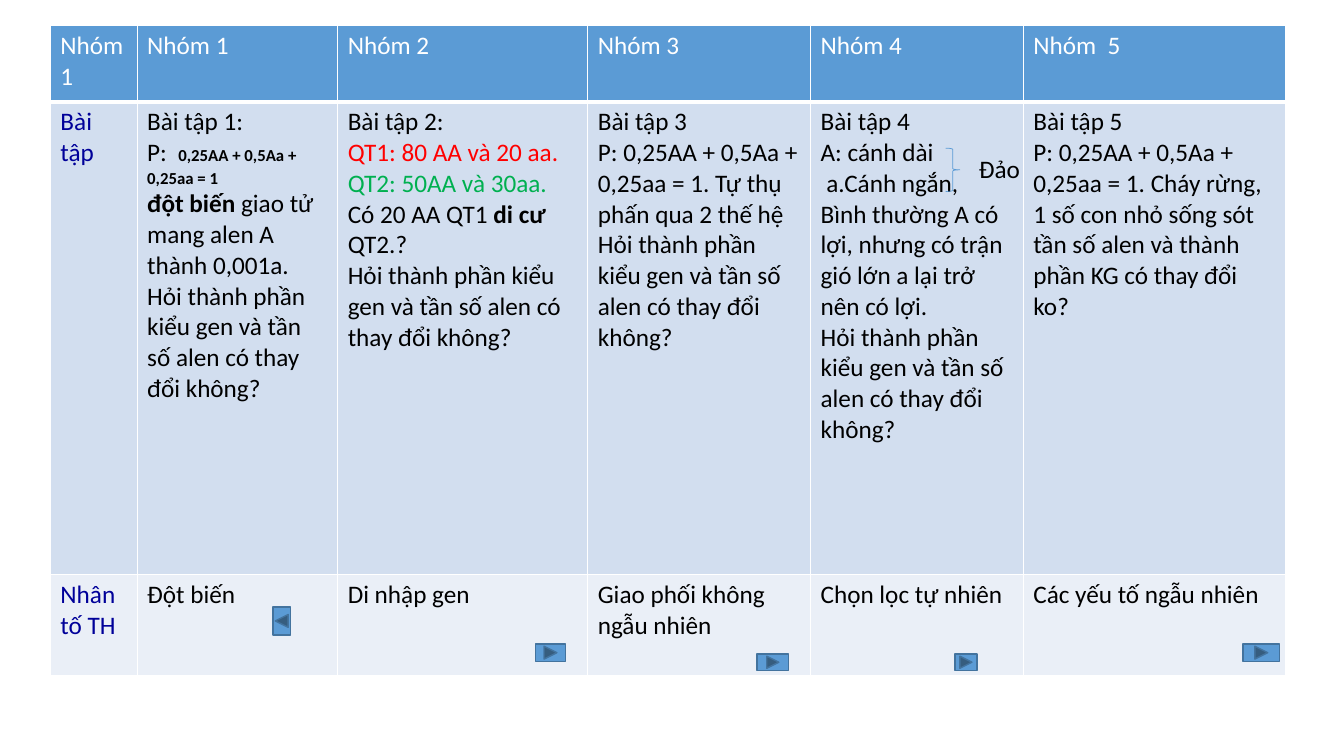
import pptx
import pptx.util
import pptx.dml.color
import pptx.enum.shapes
import pptx.oxml.ns
import lxml.etree

Inches, Pt = pptx.util.Inches, pptx.util.Pt
RGBColor = pptx.dml.color.RGBColor
MSO_SHAPE = pptx.enum.shapes.MSO_SHAPE

WHITE = RGBColor(0xFF, 0xFF, 0xFF)
BLACK = RGBColor(0, 0, 0)
NAVY = RGBColor(0, 0, 0x99)
RED = RGBColor(0xFF, 0, 0)
GREEN = RGBColor(0, 0xB0, 0x50)
BLUE = RGBColor(0x5B, 0x9B, 0xD5)
DARK_BLUE = RGBColor(0x43, 0x73, 0x9E)
ROW_FILLS = [BLUE, RGBColor(0xD2, 0xDE, 0xEF), RGBColor(0xEA, 0xEF, 0xF7)]

QUESTION = "Hỏi thành phần kiểu gen và tần số alen có thay đổi không?"
POPULATION = "0,25AA + 0,5Aa + 0,25aa = 1"


def add_run(p, text, color=BLACK, size=18, bold=False):
    r = p.add_run()
    r.text = text
    r.font.name = "Calibri"
    r.font.size = Pt(size)
    r.font.bold = bold
    r.font.color.rgb = color


def add_border(cell, side, width):
    tcPr = cell._tc.get_or_add_tcPr()
    ln = lxml.etree.SubElement(tcPr, pptx.oxml.ns.qn("a:ln" + side), w=str(Pt(width)))
    fill = lxml.etree.SubElement(ln, pptx.oxml.ns.qn("a:solidFill"))
    lxml.etree.SubElement(fill, pptx.oxml.ns.qn("a:srgbClr"), val=str(WHITE))


prs = pptx.Presentation()
prs.slide_width, prs.slide_height = Inches(13.33), Inches(7.5)
s = prs.slides.add_slide(prs.slide_layouts[6])

headers = ["Nhóm 1", "Nhóm 1", "Nhóm 2", "Nhóm 3", "Nhóm 4", "Nhóm  5"]
factors = ["Nhân tố TH", "Đột biến", "Di nhập gen", "Giao phối không ngẫu nhiên",
           "Chọn lọc tự nhiên", "Các yếu tố ngẫu nhiên"]
exercises = [
    [[("Bài tập", NAVY)]],
    [[("Bài tập 1:",)],
     [("P:  ",), (POPULATION, BLACK, 12, True)],
     [("đột biến ", BLACK, 18, True),
      ("giao tử mang alen A thành 0,001a. " + QUESTION,)]],
    [[("Bài tập 2:",)],
     [("QT1: 80 AA và 20 aa.", RED)],
     [("QT2: 50AA và 30aa. ", GREEN), ("Có 20 AA QT1 ",),
      ("di cư", BLACK, 18, True), (" QT2.?",)],
     [(QUESTION,)]],
    [[("Bài tập 3",)],
     [(f"P: {POPULATION}. Tự thụ phấn qua 2 thế hệ",)],
     [(QUESTION,)]],
    [[("Bài tập 4",)],
     [("A: cánh dài",)],
     [(" a.Cánh ngắn,",)],
     [("Bình thường A có lợi, nhưng có trận gió lớn a lại trở nên có lợi.",)],
     [(QUESTION,)]],
    [[("Bài tập 5",)],
     [(f"P: {POPULATION}. Cháy rừng, 1 số con nhỏ sống sót tần số alen "
       "và thành phần KG có thay đổi ko?",)]],
]
rows = [
    [[[(text, WHITE)]] for text in headers],
    exercises,
    [[[(text, BLACK if i else NAVY)]] for i, text in enumerate(factors)],
]

table = s.shapes.add_table(3, 6, Inches(0.5), Inches(0.25), Inches(12.25), Inches(6.45)).table
for col, width in zip(table.columns, [0.86, 1.99, 2.48, 2.21, 2.11, 2.6]):
    col.width = Inches(width)
for row, height in zip(table.rows, [0.76, 4.69, 1]):
    row.height = Inches(height)

for i, row in enumerate(rows):
    for j, paragraphs in enumerate(row):
        cell = table.cell(i, j)
        for side in "LRTB":
            heavy = (i, side) in [(0, "B"), (1, "T")]
            add_border(cell, side, 3 if heavy else 1)
        cell.fill.solid()
        cell.fill.fore_color.rgb = ROW_FILLS[i]
        tf = cell.text_frame
        for k, runs in enumerate(paragraphs):
            p = tf.add_paragraph() if k else tf.paragraphs[0]
            for run in runs:
                add_run(p, *run)

BACK = MSO_SHAPE.ACTION_BUTTON_BACK_OR_PREVIOUS
NEXT = MSO_SHAPE.ACTION_BUTTON_FORWARD_OR_NEXT
buttons = [
    (BACK, 2.71, 6.02, 0.17, 0.28),
    (NEXT, 5.31, 6.39, 0.3, 0.17),
    (NEXT, 7.51, 6.49, 0.31, 0.16),
    (NEXT, 9.47, 6.49, 0.22, 0.16),
    (NEXT, 12.33, 6.39, 0.36, 0.17),
]
for kind, *box in buttons:
    sp = s.shapes.add_shape(kind, *map(Inches, box))
    sp.shadow.inherit = False
    sp.fill.solid()
    sp.fill.fore_color.rgb = BLUE
    sp.line.color.rgb = DARK_BLUE
    sp.line.width = Pt(1)

brace = s.shapes.add_shape(MSO_SHAPE.RIGHT_BRACE, Inches(9.38), Inches(1.47), Inches(0.14), Inches(0.43))
brace.shadow.inherit = False
brace.fill.background()
brace.line.color.rgb = BLUE
brace.line.width = Pt(0.5)

label = s.shapes.add_textbox(Inches(9.61), Inches(1.47), Inches(0.61), Inches(0.4))
label.text_frame.word_wrap = True
add_run(label.text_frame.paragraphs[0], "Đảo")

prs.save("out.pptx")
